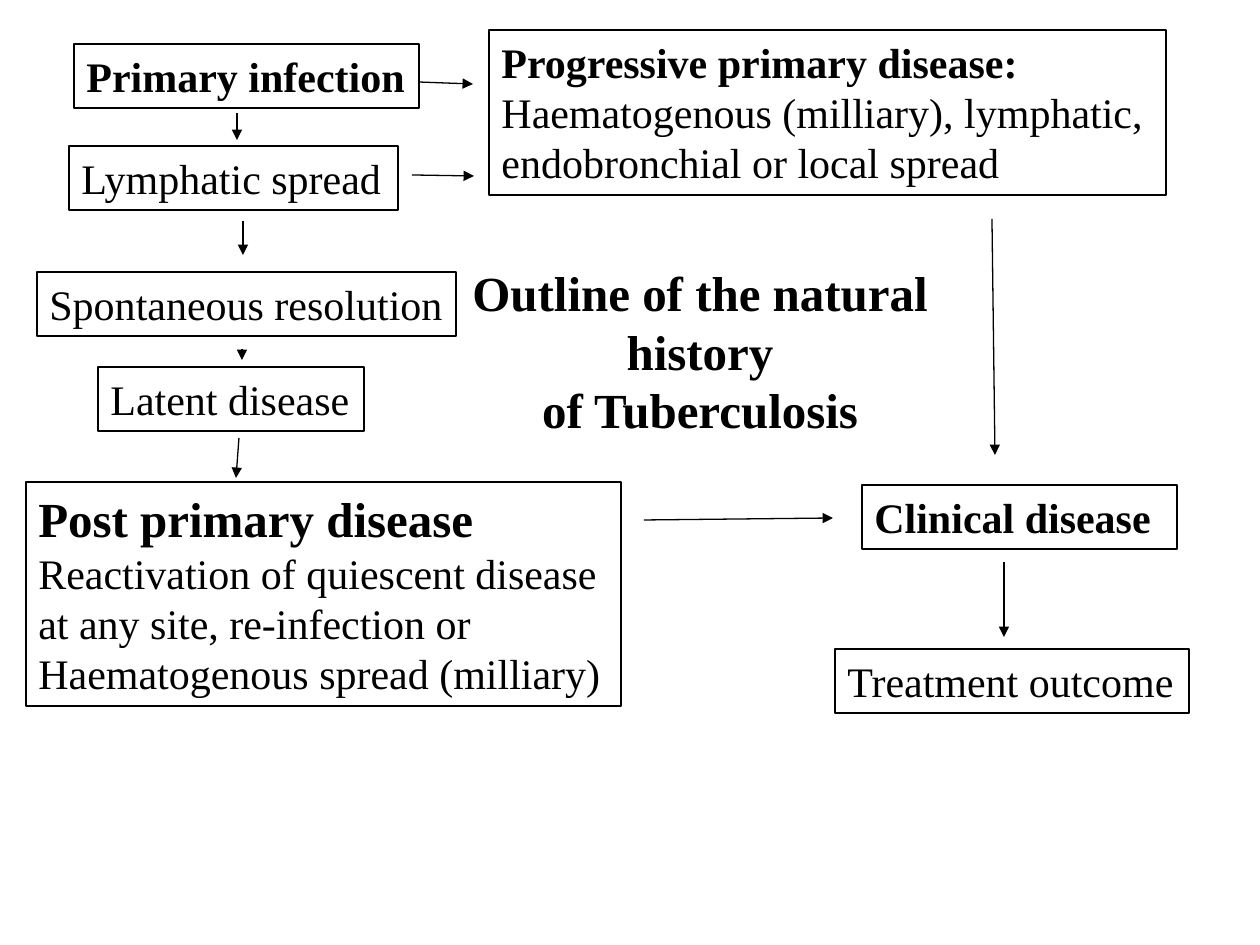
from lxml.etree import SubElement
from pptx import Presentation
from pptx.dml.color import RGBColor
from pptx.enum.shapes import MSO_CONNECTOR, MSO_SHAPE
from pptx.enum.text import MSO_ANCHOR, MSO_AUTO_SIZE, PP_ALIGN
from pptx.oxml.ns import qn
from pptx.util import Emu, Pt

EMU_PER_PX = 914400 / 126
BLACK = "000000"
BODY = {"size": Pt(24), "bold": False}
STRONG = {"size": Pt(24), "bold": True}
HEADING = {"size": Pt(28), "bold": True}
LINE_HEIGHT = 64

BOXES = [
    ((74, 44, 345, LINE_HEIGHT), False, [[("Primary infection", STRONG)]]),
    ((69, 146, 329, LINE_HEIGHT), False, [[("Lymphatic spread", BODY)]]),
    ((37, 272, 419, LINE_HEIGHT), False, [[("Spontaneous resolution", BODY)]]),
    ((98, 367, 266, LINE_HEIGHT), False, [[("Latent disease", BODY)]]),
    ((26, 482, 595, 224), False, [
        [("Post primary disease", HEADING)],
        [("Reactivation of quiescent disease", BODY)],
        [("at any site, re-infection or", BODY)],
        [("Haematogenous spread (milliary)", BODY)],
    ]),
    ((489, 30, 677, 165), True, [[
        ("Progressive primary disease:", STRONG),
        (" Haematogenous (milliary), lymphatic, endobronchial or local spread", BODY),
    ]]),
    ((862, 485, 315, LINE_HEIGHT), True, [[("Clinical disease", STRONG)]]),
    ((835, 649, 354, LINE_HEIGHT), False, [[("Treatment outcome", BODY)]]),
]

TITLE = [
    [("Outline of the natural history", HEADING)],
    [("of Tuberculosis", HEADING)],
]

ARROWS = [
    (237, 113, 237, 140),
    (243, 221, 243, 255),
    (242, 349, 242, 360),
    (239, 438, 236, 478),
    (419, 82, 473, 84),
    (412, 175, 474, 176),
    (992, 219, 995, 455),
    (644, 520, 833, 518),
    (1004, 562, 1004, 637),
]


def px(*lengths):
    return [Emu(round(length * EMU_PER_PX)) for length in lengths]


def color(value):
    return RGBColor.from_string(value)


def set_attributes(target, values):
    for name, value in values.items():
        setattr(target, name, value)


def write_text(shape, paragraphs, alignment, wrap):
    text_frame = shape.text_frame
    set_attributes(text_frame, {
        "word_wrap": wrap,
        "auto_size": MSO_AUTO_SIZE.SHAPE_TO_FIT_TEXT,
        "vertical_anchor": MSO_ANCHOR.TOP,
    })
    for index, runs in enumerate(paragraphs):
        paragraph = text_frame.add_paragraph() if index else text_frame.paragraphs[0]
        paragraph.alignment = alignment
        for text, style in runs:
            run = paragraph.add_run()
            run.text = text
            set_attributes(run.font, {"name": "Times New Roman", **style})
            run.font.color.rgb = color(BLACK)


def style_line(line):
    line.color.rgb = color(BLACK)
    line.width = Pt(0.75)


def add_box(slide, bounds, wrap, paragraphs):
    shape = slide.shapes.add_shape(MSO_SHAPE.RECTANGLE, *px(*bounds))
    shape.shadow.inherit = False
    shape.fill.background()
    style_line(shape.line)
    write_text(shape, paragraphs, PP_ALIGN.LEFT, wrap)


def add_title(slide, bounds, paragraphs):
    shape = slide.shapes.add_textbox(*px(*bounds))
    write_text(shape, paragraphs, PP_ALIGN.CENTER, True)


def add_arrow(slide, points):
    connector = slide.shapes.add_connector(MSO_CONNECTOR.STRAIGHT, *px(*points))
    style_line(connector.line)
    properties = connector._element.spPr
    SubElement(properties.find(qn("a:ln")), qn("a:tailEnd"), type="triangle")
    SubElement(properties, qn("a:effectLst"))


def main():
    presentation = Presentation()
    presentation.slide_width, presentation.slide_height = px(1260, 945)
    slide = presentation.slides.add_slide(presentation.slide_layouts[6])
    for bounds, wrap, paragraphs in BOXES:
        add_box(slide, bounds, wrap, paragraphs)
    add_title(slide, (427, 256, 546, 190), TITLE)
    for points in ARROWS:
        add_arrow(slide, points)
    presentation.save("out.pptx")


if __name__ == "__main__":
    main()
